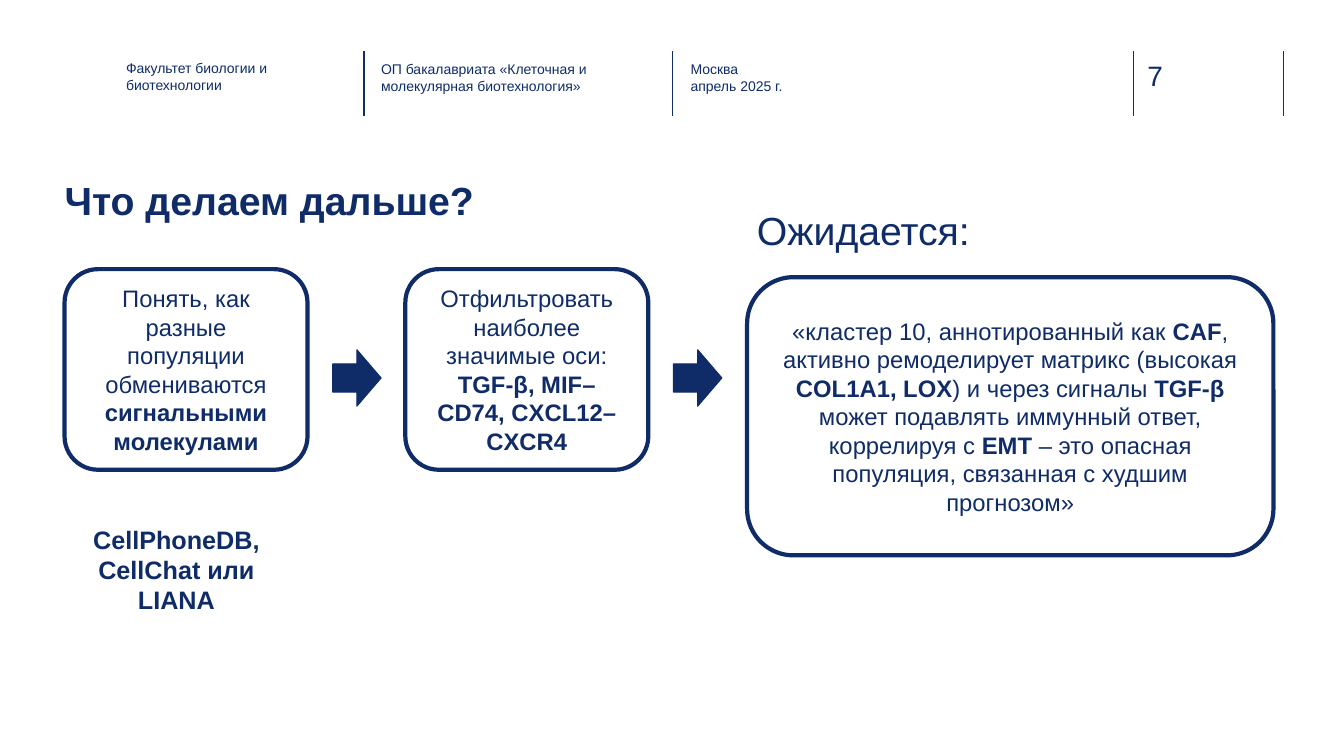
import pptx
import pptx.util
import pptx.dml.color
import pptx.enum.shapes
import pptx.enum.text
import pptx.oxml

PX = 9144  # 100 px to the inch
COLORS = {"navy": "0F2C68", "rule": "102D69", "header": "0E2D69", "white": "FFFFFF"}
SHAPES = pptx.enum.shapes.MSO_SHAPE
ALIGN = pptx.enum.text.PP_ALIGN


def rgb(name):
    return pptx.dml.color.RGBColor.from_string(COLORS[name])


class Deck:
    font = "Arial"

    def __init__(self, width, height):
        self.prs = pptx.Presentation()
        self.prs.slide_width = width * PX
        self.prs.slide_height = height * PX
        self.s = self.prs.slides.add_slide(self.prs.slide_layouts[6])

    def set_text(self, sp, paragraphs, size, color, bold=None, align=None, inset=0):
        """Fill a shape with paragraphs; each is a list of runs, every second run bold."""
        tf = sp.text_frame
        tf.word_wrap = True
        tf.margin_left = tf.margin_right = tf.margin_top = tf.margin_bottom = inset * PX
        for i, runs in enumerate(paragraphs):
            p = tf.paragraphs[0] if i == 0 else tf.add_paragraph()
            p.alignment = align
            p.font.name = self.font
            p.font.size = pptx.util.Pt(size)
            p.font.color.rgb = rgb(color)
            p.font.bold = bold
            for j, text in enumerate(runs):
                r = p.add_run()
                r.text = text
                if j % 2:
                    r.font.bold = True

    def text(self, box, paragraphs, size, color="navy", **style):
        sp = self.s.shapes.add_textbox(*(v * PX for v in box))
        self.set_text(sp, paragraphs, size, color, **style)

    def shape(self, kind, box, fill, line_width):
        sp = self.s.shapes.add_shape(kind, *(v * PX for v in box))
        sp.shadow.inherit = False
        sp.fill.solid()
        sp.fill.fore_color.rgb = rgb(fill)
        sp.line.color.rgb = rgb("navy")
        sp.line.width = pptx.util.Pt(line_width)
        return sp

    def card(self, box, runs):
        sp = self.shape(SHAPES.FLOWCHART_ALTERNATE_PROCESS, box, "white", 3)
        sp.text_frame.vertical_anchor = pptx.enum.text.MSO_ANCHOR.MIDDLE
        self.set_text(sp, [runs], 17, "navy", align=ALIGN.CENTER, inset=10)

    def arrow(self, box):
        self.shape(SHAPES.RIGHT_ARROW, box, "navy", 0.75)

    def rule(self, x, top, bottom):
        line = self.s.shapes.add_connector(
            pptx.enum.shapes.MSO_CONNECTOR.STRAIGHT, x * PX, top * PX, x * PX, bottom * PX)
        line.line.color.rgb = rgb("rule")
        line.line.width = pptx.util.Pt(1)
        line._element.spPr.append(pptx.oxml.parse_xml(
            '<a:effectLst xmlns:a="http://schemas.openxmlformats.org/drawingml/2006/main"/>'))


def main():
    deck = Deck(1333, 750)

    for x in (361, 667, 1124, 1273):
        deck.rule(x, 51, 115)
    deck.text((1138, 58, 73, 34), [["7"]], 20, "rule")
    deck.text((125, 59, 208, 45), [["Факультет биологии и биотехнологии"]], 10)
    deck.text((378, 60, 226, 45),
              [["ОП бакалавриата «Клеточная и молекулярная биотехнология»"]], 10, "header")
    deck.text((685, 60, 226, 45), [["Москва"], ["апрель 2025 г."]], 10, "header")

    deck.text((64, 175, 1209, 85), [["Что делаем дальше?"]], 28, bold=True)
    deck.text((741, 195, 303, 45), [["Ожидается:"]], 28, inset=10)

    steps = [
        ["Понять, как разные популяции обмениваются ", "сигнальными молекулами"],
        ["Отфильтровать наиболее значимые оси: ", "TGF-β, MIF–CD74, CXCL12–CXCR4"],
    ]
    for i, runs in enumerate(steps):
        left = 64 + 338 * i
        deck.card((left, 267, 241, 199), runs)
        deck.arrow((left + 266, 347, 48, 56))

    deck.card((741, 275, 522, 276), [
        "«кластер 10, аннотированный как ", "CAF",
        ", активно ремоделирует матрикс (высокая ", "COL1A1, LOX",
        ") и через сигналы ", "TGF-β",
        " может подавлять иммунный ответ, коррелируя с ", "EMT",
        " – это опасная популяция, связанная с худшим прогнозом»",
    ])
    deck.text((77, 510, 196, 155), [["CellPhoneDB, CellChat или LIANA"]], 18,
              bold=True, align=ALIGN.CENTER, inset=10)

    deck.prs.save("out.pptx")


if __name__ == "__main__":
    main()
